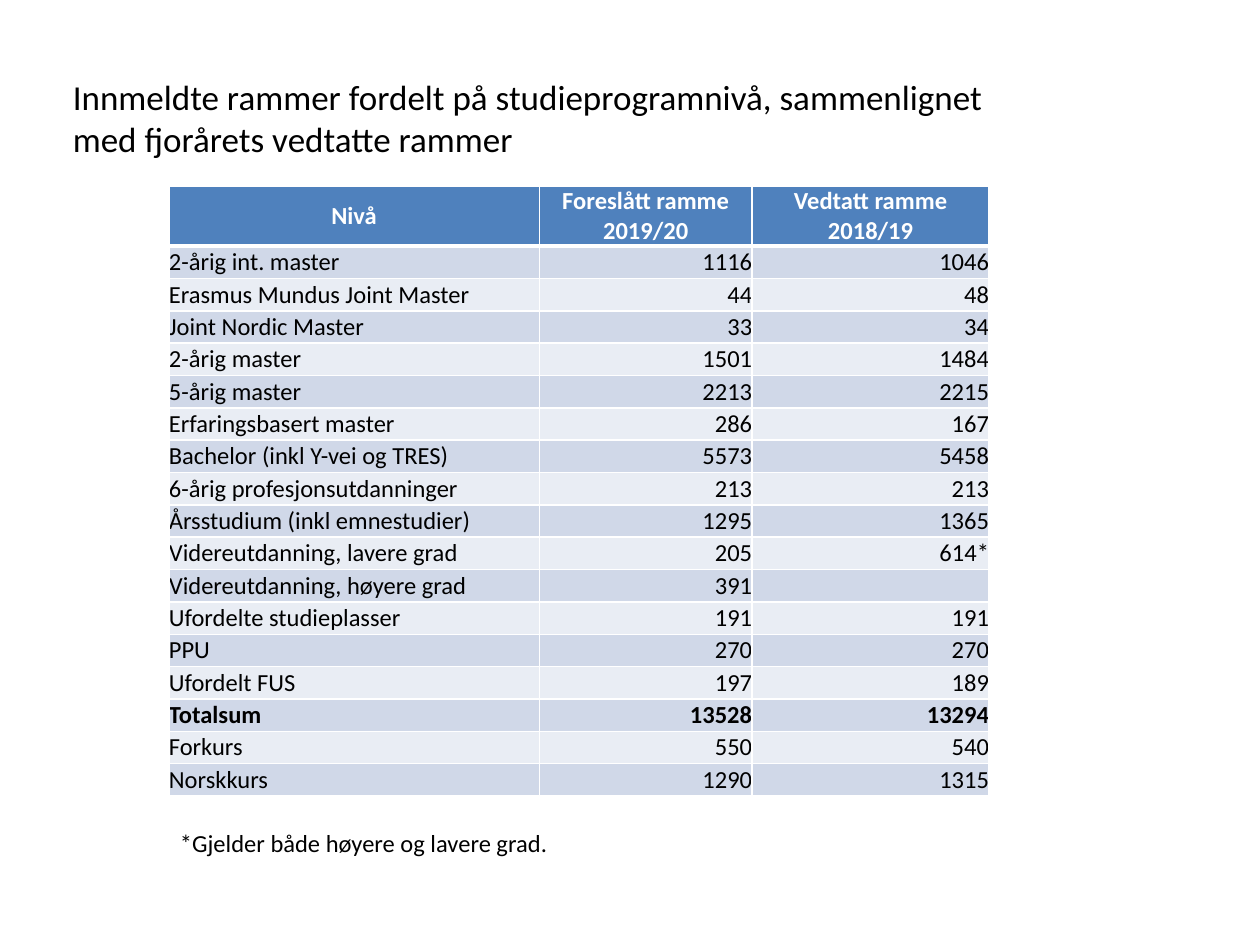
import pptx
import pptx.util
import pptx.dml.color
import pptx.enum.text
import lxml.etree
from pptx.util import Inches

COLORS = {"text": "000000", "white": "FFFFFF", "header": "4F81BD",
          "odd": "D0D8E8", "even": "E9EDF4"}
ALIGN = pptx.enum.text.PP_ALIGN
ANCHOR = pptx.enum.text.MSO_ANCHOR
DRAWING_NS = "{http://schemas.openxmlformats.org/drawingml/2006/main}"

TITLE = ("Innmeldte rammer fordelt på studieprogramnivå, "
         "sammenlignet med fjorårets vedtatte rammer")
FOOTNOTE = "*Gjelder både høyere og lavere grad."
HEADER = ("Nivå", "Foreslått ramme 2019/20", "Vedtatt ramme 2018/19")
TOTAL = "Totalsum"
LEVELS = [
    ("2-årig int. master", "1116", "1046"),
    ("Erasmus Mundus Joint Master", "44", "48"),
    ("Joint Nordic Master", "33", "34"),
    ("2-årig master", "1501", "1484"),
    ("5-årig master", "2213", "2215"),
    ("Erfaringsbasert master", "286", "167"),
    ("Bachelor (inkl Y-vei og TRES)", "5573", "5458"),
    ("6-årig profesjonsutdanninger", "213", "213"),
    ("Årsstudium (inkl emnestudier)", "1295", "1365"),
    ("Videreutdanning, lavere grad", "205", "614*"),
    ("Videreutdanning, høyere grad", "391", ""),
    ("Ufordelte studieplasser", "191", "191"),
    ("PPU", "270", "270"),
    ("Ufordelt FUS", "197", "189"),
    (TOTAL, "13528", "13294"),
    ("Forkurs", "550", "540"),
    ("Norskkurs", "1290", "1315"),
]


def rgb(name):
    return pptx.dml.color.RGBColor.from_string(COLORS[name])


def write_text(tf, text, size=14, color="text", bold=False, align=ALIGN.LEFT):
    p = tf.paragraphs[0]
    p.alignment = align
    if not text:
        # An empty cell still needs its font size, or the row grows
        lxml.etree.SubElement(p._p, DRAWING_NS + "endParaRPr", sz=str(size * 100))
        return
    r = p.add_run()
    r.text = text
    r.font.name = "Calibri"
    r.font.size = pptx.util.Pt(size)
    r.font.bold = bold
    r.font.color.rgb = rgb(color)


class SlideBuilder:
    def __init__(self, slide):
        self.s = slide

    def text_box(self, text, left, top, width, height, **style):
        sp = self.s.shapes.add_textbox(Inches(left), Inches(top),
                                       Inches(width), Inches(height))
        sp.text_frame.word_wrap = True
        write_text(sp.text_frame, text, **style)

    def borders(self, cell, bottom):
        tc_pr = cell._tc.get_or_add_tcPr()
        widths = {"lnL": 1, "lnR": 1, "lnT": 1, "lnB": bottom}
        for i, (side, width) in enumerate(widths.items()):
            ln = lxml.etree.Element(DRAWING_NS + side, w=str(pptx.util.Pt(width)))
            fill = lxml.etree.SubElement(ln, DRAWING_NS + "solidFill")
            lxml.etree.SubElement(fill, DRAWING_NS + "srgbClr", val=COLORS["white"])
            tc_pr.insert(i, ln)

    def cell(self, cell, text, fill, bottom=1, **style):
        cell.margin_left = cell.margin_right = 0
        cell.margin_top = cell.margin_bottom = 0
        cell.vertical_anchor = ANCHOR.MIDDLE
        cell.fill.solid()
        cell.fill.fore_color.rgb = rgb(fill)
        self.borders(cell, bottom)
        write_text(cell.text_frame, text, **style)

    def table(self, header, rows, left, top, widths, header_height, body_height):
        frame = self.s.shapes.add_table(
            len(rows) + 1, len(header), Inches(left), Inches(top),
            Inches(sum(widths)), Inches(header_height + body_height))
        table = frame.table
        for column, width in zip(table.columns, widths):
            column.width = Inches(width)
        for row in table.rows:
            row.height = Inches(body_height / len(rows))
        table.rows[0].height = Inches(header_height)

        for c, text in enumerate(header):
            self.cell(table.cell(0, c), text, "header", bottom=3,
                      color="white", bold=True, align=ALIGN.CENTER)
        for r, values in enumerate(rows, start=1):
            for c, text in enumerate(values):
                self.cell(table.cell(r, c), text, "odd" if r % 2 else "even",
                          bold=values[0] == TOTAL,
                          align=ALIGN.RIGHT if c else ALIGN.LEFT)


def main():
    prs = pptx.Presentation()
    prs.slide_width, prs.slide_height = Inches(10), Inches(7.5)
    builder = SlideBuilder(prs.slides.add_slide(prs.slide_layouts[6]))

    # Table of study levels
    builder.table(HEADER, LEVELS, 1.34, 1.48, (2.94, 1.69, 1.88), 0.47, 4.37)
    # Footnote and heading
    builder.text_box(FOOTNOTE, 1.33, 6.52, 6.96, 0.34)
    builder.text_box(TITLE, 0.48, 0.55, 7.93, 0.77, size=20)

    prs.save("out.pptx")


if __name__ == "__main__":
    main()
